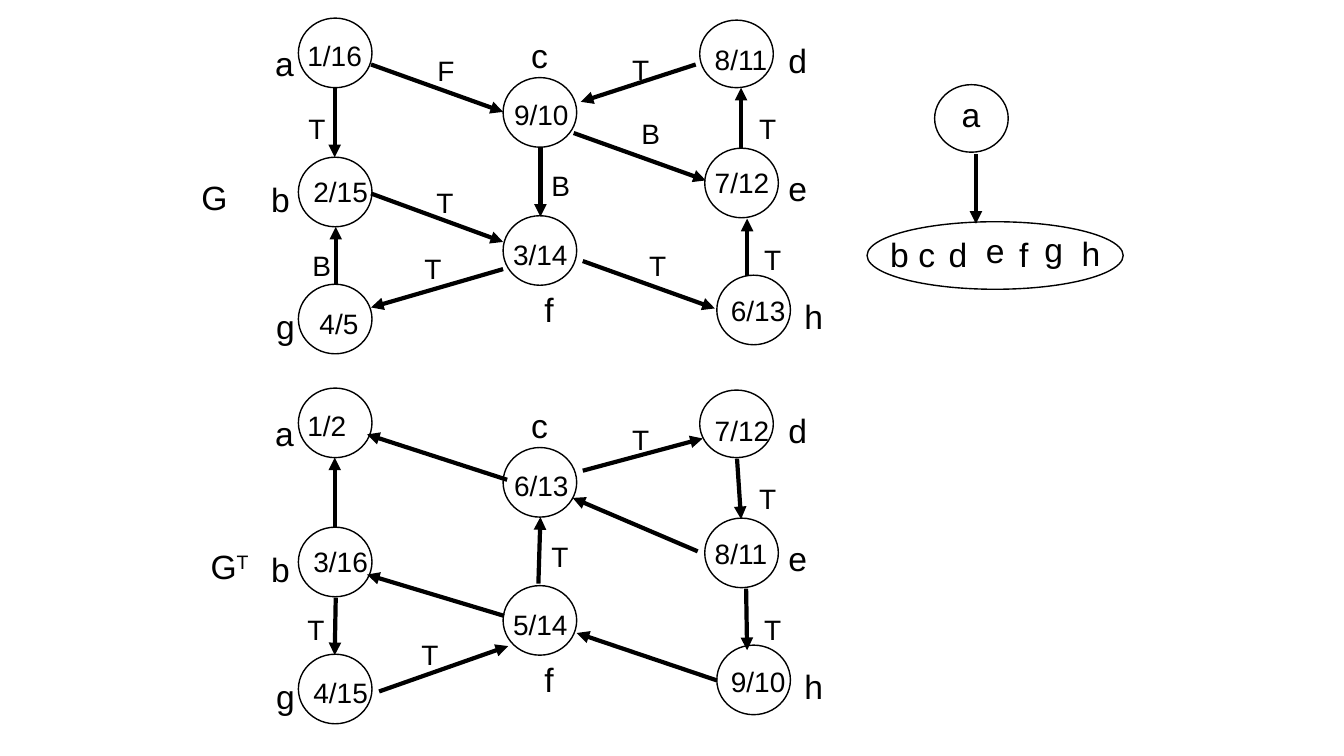
"""Depth-first search on a graph, its transpose and the component graph."""
from dataclasses import dataclass

from lxml import etree
from pptx import Presentation
from pptx import util as u
from pptx.dml.color import RGBColor
from pptx.enum import shapes, text
from pptx.oxml.ns import qn

PX = 9144


@dataclass(frozen=True)
class Theme:
    """Colours, font and sizes shared by the whole slide."""
    ink: RGBColor = RGBColor(0, 0, 0)
    paper: RGBColor = RGBColor(255, 255, 255)
    font: str = "Arial"
    name_size: int = 24
    mark_size: int = 20
    outline: int = 1
    arrow: int = 3


THEME = Theme()
NODE_WIDTH, NODE_HEIGHT = 73, 69
NAME_HEIGHT, MARK_HEIGHT = 50, 44

# Vertex: circle left and top, then name left, top and width.
VERTICES = {
    "a": (196, 18, 163, 38, 39),
    "b": (196, 156, 159, 173, 31),
    "c": (399, 77, 417, 30, 22),
    "d": (594, 20, 672, 35, 39),
    "e": (599, 147, 672, 162, 39),
    "f": (399, 214, 430, 282, 29),
    "g": (196, 282, 164, 299, 27),
    "h": (611, 273, 688, 289, 39),
}

# Times: text, left, top.
GRAPH_TIMES = [
    ("1/16", 195, 33), ("2/15", 201, 168), ("9/10", 400, 92), ("8/11", 599, 37),
    ("7/12", 599, 159), ("3/14", 399, 231), ("4/5", 207, 299), ("6/13", 615, 286),
]
TRANSPOSE_TIMES = [
    ("1/2", 195, 33), ("3/16", 201, 168), ("6/13", 400, 93), ("7/12", 599, 38),
    ("8/11", 599, 160), ("5/14", 399, 231), ("4/15", 201, 298), ("9/10", 615, 287),
]

# Edge: start and end points.
GRAPH_EDGES = [
    (232, 87, 232, 156), (436, 146, 436, 215), (233, 282, 233, 225),
    (641, 274, 641, 217), (635, 147, 635, 87), (268, 64, 399, 111),
    (478, 259, 609, 306), (469, 132, 600, 179), (268, 192, 399, 240),
    (590, 64, 476, 101), (399, 267, 268, 305),
]
TRANSPOSE_EDGES = [
    (232, 156, 232, 87), (434, 212, 436, 146), (233, 226, 232, 283),
    (640, 217, 641, 278), (631, 88, 635, 148), (403, 109, 264, 64),
    (611, 308, 472, 261), (592, 180, 468, 127), (400, 244, 264, 203),
    (478, 100, 597, 68), (276, 319, 404, 274),
]

# Edge type: text, left, top, width.
GRAPH_MARKS = [
    ("T", 196, 106, 23), ("T", 323, 179, 22), ("T", 311, 245, 31), ("T", 534, 242, 31),
    ("T", 517, 47, 31), ("T", 643, 106, 29), ("T", 648, 236, 29), ("F", 324, 48, 22),
    ("B", 437, 162, 22), ("B", 528, 111, 18), ("B", 200, 242, 22),
]
TRANSPOSE_MARKS = [
    ("T", 308, 261, 31), ("T", 517, 47, 31), ("T", 643, 106, 29),
    ("T", 648, 236, 29), ("T", 437, 163, 22), ("T", 195, 236, 24),
]

# Members of the merged component: text, left, top, width.
MEMBERS = [
    ("b", 13, 143, 31), ("c", 41, 143, 30), ("d", 71, 143, 39), ("e", 108, 139, 29),
    ("f", 141, 143, 25), ("g", 166, 138, 30), ("h", 203, 142, 33),
]


def add_ellipse(target, left, top, width, height):
    """Draw an outlined white ellipse."""
    shape = target.add_shape(
        shapes.MSO_SHAPE.OVAL, left * PX, top * PX, width * PX, height * PX)
    shape.shadow.inherit = False
    shape.fill.solid()
    shape.fill.fore_color.rgb = THEME.paper
    shape.line.color.rgb = THEME.ink
    shape.line.width = u.Pt(THEME.outline)


def add_arrow(target, start_x, start_y, end_x, end_y):
    """Draw a thick line with a triangle at its end."""
    connector = target.add_connector(
        shapes.MSO_CONNECTOR.STRAIGHT,
        start_x * PX, start_y * PX, end_x * PX, end_y * PX)
    connector.line.color.rgb = THEME.ink
    connector.line.width = u.Pt(THEME.arrow)
    etree.SubElement(connector.line._get_or_add_ln(), qn("a:tailEnd"), type="triangle")
    etree.SubElement(connector._element.spPr, qn("a:effectLst"))


def add_label(target, content, left, top, width, height, size):
    """Write a one-line label and return its paragraph."""
    box = target.add_textbox(left * PX, top * PX, width * PX, height * PX)
    frame = box.text_frame
    frame.word_wrap = len(content) == 1
    frame.auto_size = text.MSO_AUTO_SIZE.SHAPE_TO_FIT_TEXT
    frame.text = content
    paragraph = frame.paragraphs[0]
    format_run(paragraph.runs[0], size)
    return paragraph


def format_run(run, size):
    """Apply the theme font to a run."""
    run.font.name = THEME.font
    run.font.size = u.Pt(size)
    run.font.color.rgb = THEME.ink


def add_graph(slide, left, top, times, edges, marks):
    """Draw one eight-vertex graph in the box that starts at left, top."""
    target = slide.shapes.add_group_shape().shapes
    for name, (x, y, *_) in VERTICES.items():
        height = NODE_HEIGHT - 2 if name == "d" else NODE_HEIGHT
        add_ellipse(target, left + x, top + y, NODE_WIDTH, height)
    for start_x, start_y, end_x, end_y in edges:
        add_arrow(target, left + start_x, top + start_y, left + end_x, top + end_y)
    for name, (_, _, x, y, width) in VERTICES.items():
        add_label(target, name, left + x, top + y, width, NAME_HEIGHT, THEME.name_size)
    for content, x, y in times:
        width = 11 + 16 * len(content)
        add_label(target, content, left + x, top + y, width, MARK_HEIGHT, THEME.mark_size)
    for content, x, y, width in marks:
        add_label(target, content, left + x, top + y, width, MARK_HEIGHT, THEME.mark_size)


def add_graph_title(slide, left, top, width, superscript=""):
    """Write the graph letter G with an optional superscript."""
    paragraph = add_label(
        slide.shapes, "G", left, top, width, NAME_HEIGHT, THEME.name_size)
    if superscript:
        paragraph.runs[0].text = "G"
        run = paragraph.add_run()
        run.text = superscript
        format_run(run, THEME.name_size)
        run.font._element.set("baseline", "30000")


def add_component_graph(slide, left, top):
    """Draw the two strongly connected components and their edge."""
    target = slide.shapes.add_group_shape().shapes
    add_ellipse(target, left + 67, top, NODE_WIDTH, 67)
    add_ellipse(target, left, top + 136, 254, 67)
    add_arrow(target, left + 108, top + 69, left + 108, top + 138)
    for content, x, y, width in [("a", 84, 4, 39)] + MEMBERS:
        add_label(target, content, left + x, top + y, width, NAME_HEIGHT, THEME.name_size)


def main():
    """Build and save the slide."""
    presentation = Presentation()
    presentation.slide_width = u.Inches(13.33)
    presentation.slide_height = u.Inches(7.5)
    slide = presentation.slides.add_slide(presentation.slide_layouts[6])
    add_graph(slide, 100, 367, TRANSPOSE_TIMES, TRANSPOSE_EDGES, TRANSPOSE_MARKS)
    add_graph_title(slide, 190, 171, 46)
    add_graph_title(slide, 199, 537, 60, "T")
    add_graph(slide, 100, 0, GRAPH_TIMES, GRAPH_EDGES, GRAPH_MARKS)
    add_component_graph(slide, 860, 84)
    presentation.save("out.pptx")


if __name__ == "__main__":
    main()
